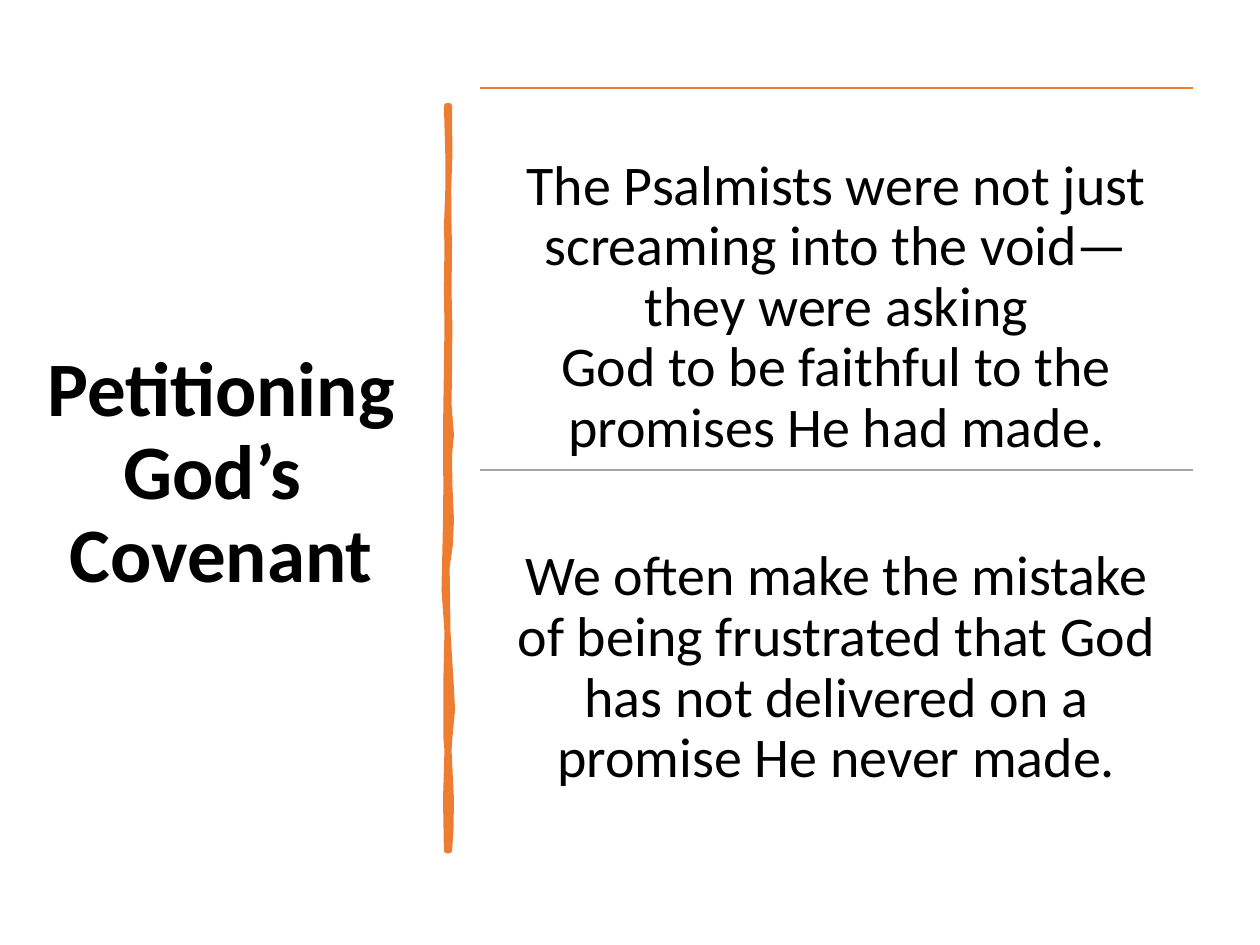
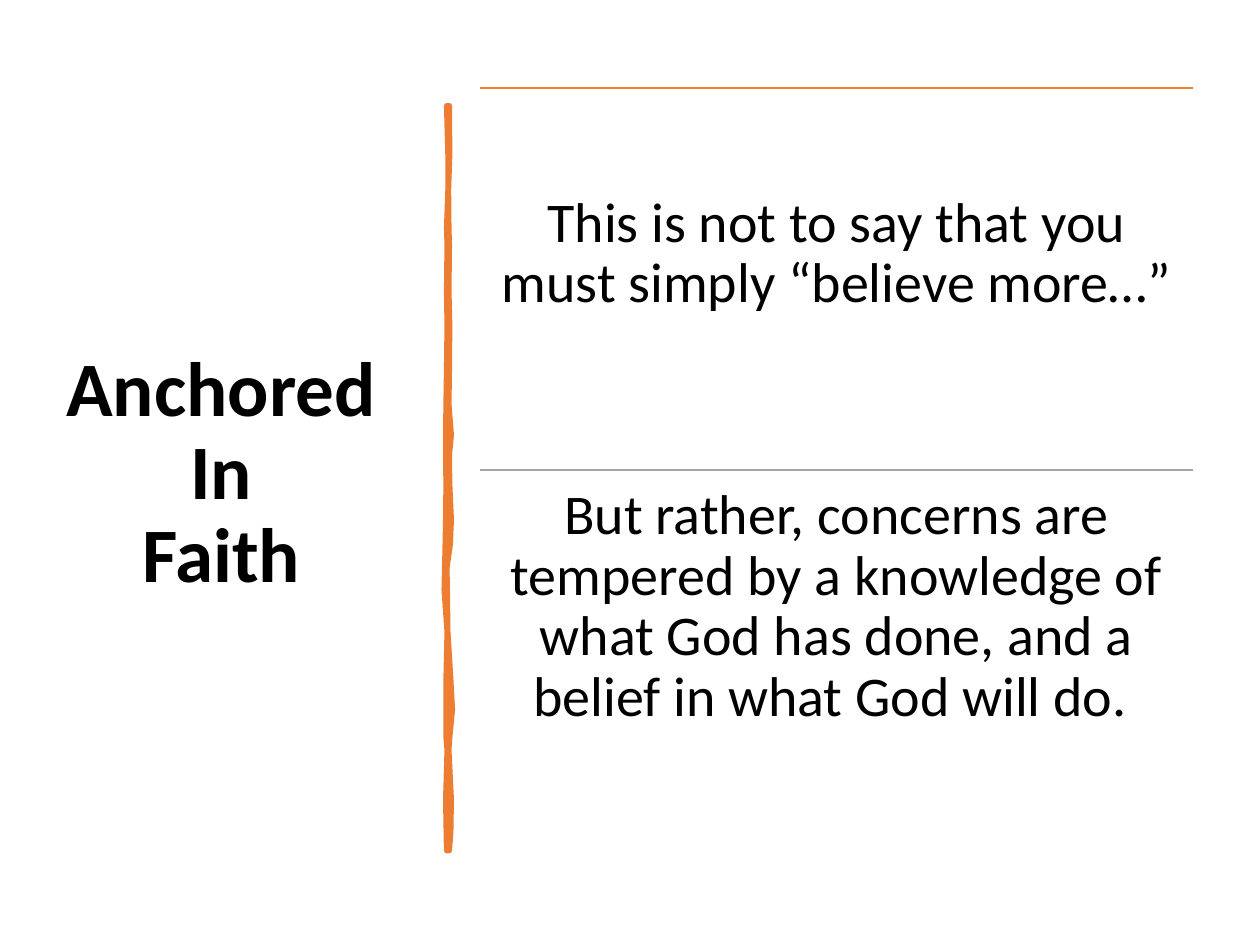
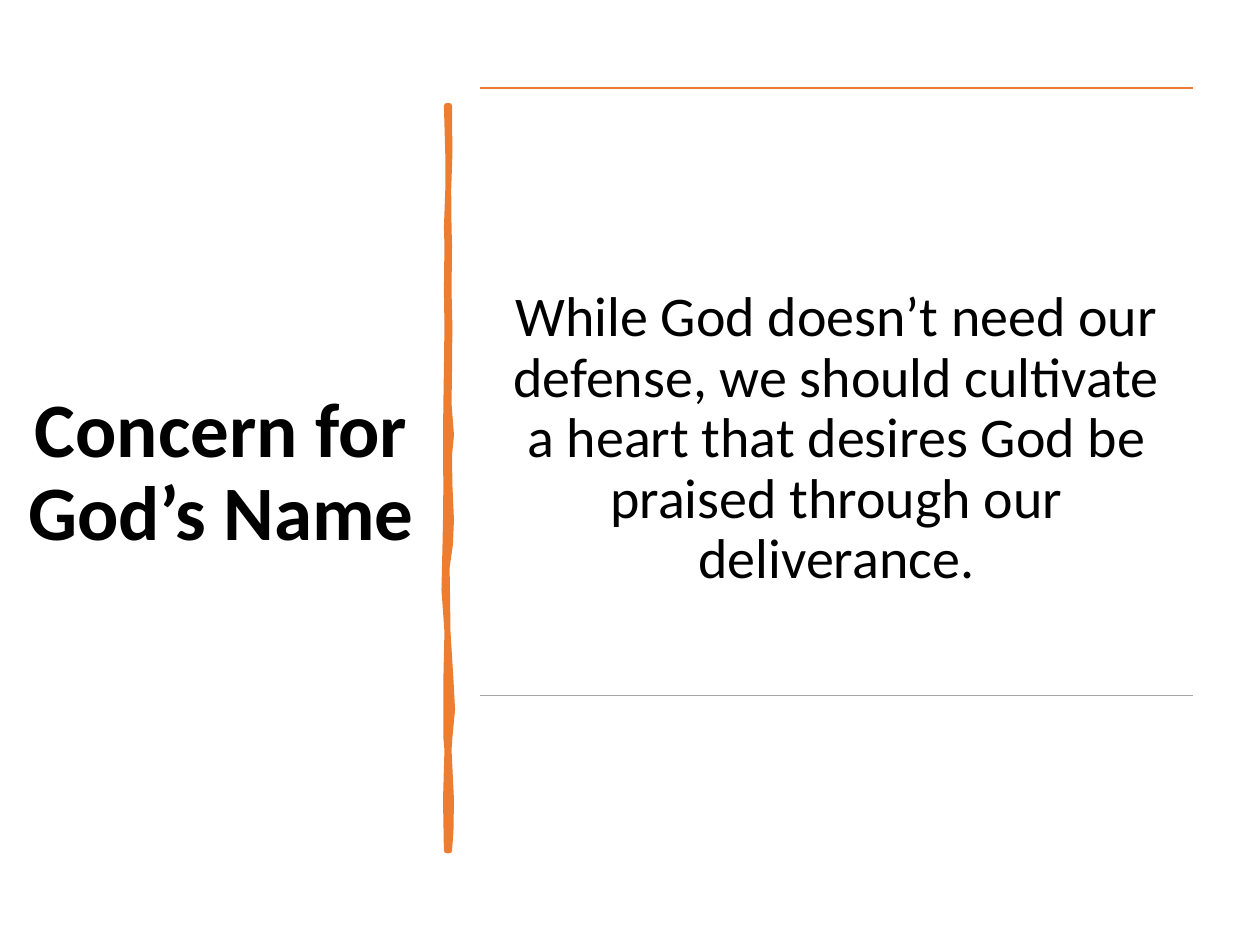
from dataclasses import dataclass

from pptx import Presentation
from pptx.dml.color import RGBColor
from pptx.enum.shapes import MSO_CONNECTOR
from pptx.enum.text import MSO_ANCHOR, MSO_AUTO_SIZE, PP_ALIGN
from pptx.oxml.ns import qn
from pptx.util import Pt


@dataclass(frozen=True)
class Theme:
    font: str = "Calibri"
    text: RGBColor = RGBColor.from_string("000000")
    accent: RGBColor = RGBColor.from_string("ED7D31")
    rule: RGBColor = RGBColor.from_string("A5A5A5")
    title_size: float = 44
    body_size: float = 32
    line_spacing: float = 0.9
    rule_width: float = 1
    brush_width: float = 3.25


THEME = Theme()

# Content: title, panel height, rule after the last panel,
# and panels as (drop of the first line, lines of text)
SLIDES = [
    {
        "title": ["Petitioning", "God’s ", "Covenant"],
        "panel_height": 218.2,
        "closing_rule": False,
        "panels": [
            (30, ["The Psalmists were not just screaming into the void—",
                  "they were asking",
                  "God to be faithful to the promises He had made."]),
            (35, ["We often make the mistake of being frustrated that God "
                  "has not delivered on a promise He never made."]),
        ],
    },
    {
        "title": ["Anchored", "In", "Faith"],
        "panel_height": 218.2,
        "closing_rule": False,
        "panels": [
            (51, ["This is not to say that you must simply “believe more…”"]),
            (0, ["But rather, concerns are tempered by a knowledge of what "
                 "God has done, and a belief in what God will do. "]),
        ],
    },
    {
        "title": ["Concern for God’s Name"],
        "panel_height": 347,
        "closing_rule": True,
        "panels": [
            (105, ["While God doesn’t need our defense, we should cultivate a "
                   "heart that desires God be praised through our deliverance."]),
        ],
    },
]

# Layout, in points
SLIDE_SIZE = (720, 540)
TITLE_BOX = (5.8, 51.8, 241.2, 438.5)
PANEL_LEFT, PANEL_TOP, PANEL_WIDTH = 274.3, 50.4, 407.5
PANEL_INSET = 9.3

# Hand-drawn brush stroke: (height on the slide, left edge, right edge)
BRUSH = [
    (60.5, 255.3, 256.7), (88.5, 256.1, 256.9), (108.5, 256.1, 256.2),
    (130, 255.3, 256.4), (140, 255.6, 256.7), (166, 255.3, 256.4),
    (186, 255.6, 256.9), (211, 255.3, 256.7), (231, 255, 256.4),
    (248.5, 254.8, 257.8), (260, 254.8, 256.7), (277, 255, 256.9),
    (297, 254.8, 257.8), (311, 254.5, 257.2), (324.5, 254.2, 255.3),
    (337, 253.9, 255.5), (361, 255.6, 255.8), (388.5, 255, 257.5),
    (405.5, 255, 258.4), (421.5, 255, 256.9), (428.5, 255.6, 256.4),
    (457, 254.8, 257.8), (475, 255.1, 257.5), (486, 255.3, 256.7),
]


def write_lines(text_frame, lines, size, bold=False):
    text_frame.word_wrap = True
    text_frame.auto_size = MSO_AUTO_SIZE.NONE
    paragraph = text_frame.paragraphs[0]
    paragraph.text = "\v".join(lines)
    paragraph.alignment = PP_ALIGN.CENTER
    paragraph.line_spacing = THEME.line_spacing
    font = paragraph.font
    font.name, font.size, font.bold = THEME.font, Pt(size), bold
    font.color.rgb = THEME.text


def place_title(slide, lines):
    title = slide.shapes.title
    title.left, title.top, title.width, title.height = map(Pt, TITLE_BOX)
    title.text_frame.vertical_anchor = MSO_ANCHOR.MIDDLE
    write_lines(title.text_frame, lines, THEME.title_size, bold=True)


def draw_brush(slide):
    right_side = [(Pt(right), Pt(y)) for y, _, right in BRUSH]
    left_side = [(Pt(left), Pt(y)) for y, left, _ in reversed(BRUSH)]
    outline = right_side + left_side
    builder = slide.shapes.build_freeform(*outline[0])
    builder.add_line_segments(outline[1:], close=True)
    brush = builder.convert_to_shape()
    brush.shadow.inherit = False
    brush.fill.solid()
    brush.fill.fore_color.rgb = THEME.accent
    brush.line.color.rgb = THEME.accent
    brush.line.width = Pt(THEME.brush_width)


def draw_rule(slide, y, color):
    rule = slide.shapes.add_connector(
        MSO_CONNECTOR.STRAIGHT,
        Pt(PANEL_LEFT), Pt(y), Pt(PANEL_LEFT + PANEL_WIDTH), Pt(y))
    rule.line.color.rgb = color
    rule.line.width = Pt(THEME.rule_width)
    properties = rule._element.spPr
    properties.append(properties.makeelement(qn("a:effectLst"), {}))


def add_panel(slide, y, height, drop, lines):
    panel = slide.shapes.add_textbox(
        Pt(PANEL_LEFT), Pt(y), Pt(PANEL_WIDTH), Pt(height))
    frame = panel.text_frame
    frame.margin_left = frame.margin_right = frame.margin_bottom = Pt(PANEL_INSET)
    frame.margin_top = Pt(PANEL_INSET + drop)
    write_lines(frame, lines, THEME.body_size)


def build_slide(presentation, content):
    slide = presentation.slides.add_slide(presentation.slide_layouts[5])
    place_title(slide, content["title"])
    draw_brush(slide)

    # Stacked panels, each under its rule; only the first rule is accented
    height, panels = content["panel_height"], content["panels"]
    for index, (drop, lines) in enumerate(panels):
        y = PANEL_TOP + index * height
        draw_rule(slide, y, THEME.rule if index else THEME.accent)
        add_panel(slide, y, height, drop, lines)
    if content["closing_rule"]:
        draw_rule(slide, PANEL_TOP + len(panels) * height, THEME.rule)


def main():
    presentation = Presentation()
    presentation.slide_width, presentation.slide_height = map(Pt, SLIDE_SIZE)
    for content in SLIDES:
        build_slide(presentation, content)
    presentation.save("out.pptx")


if __name__ == "__main__":
    main()
